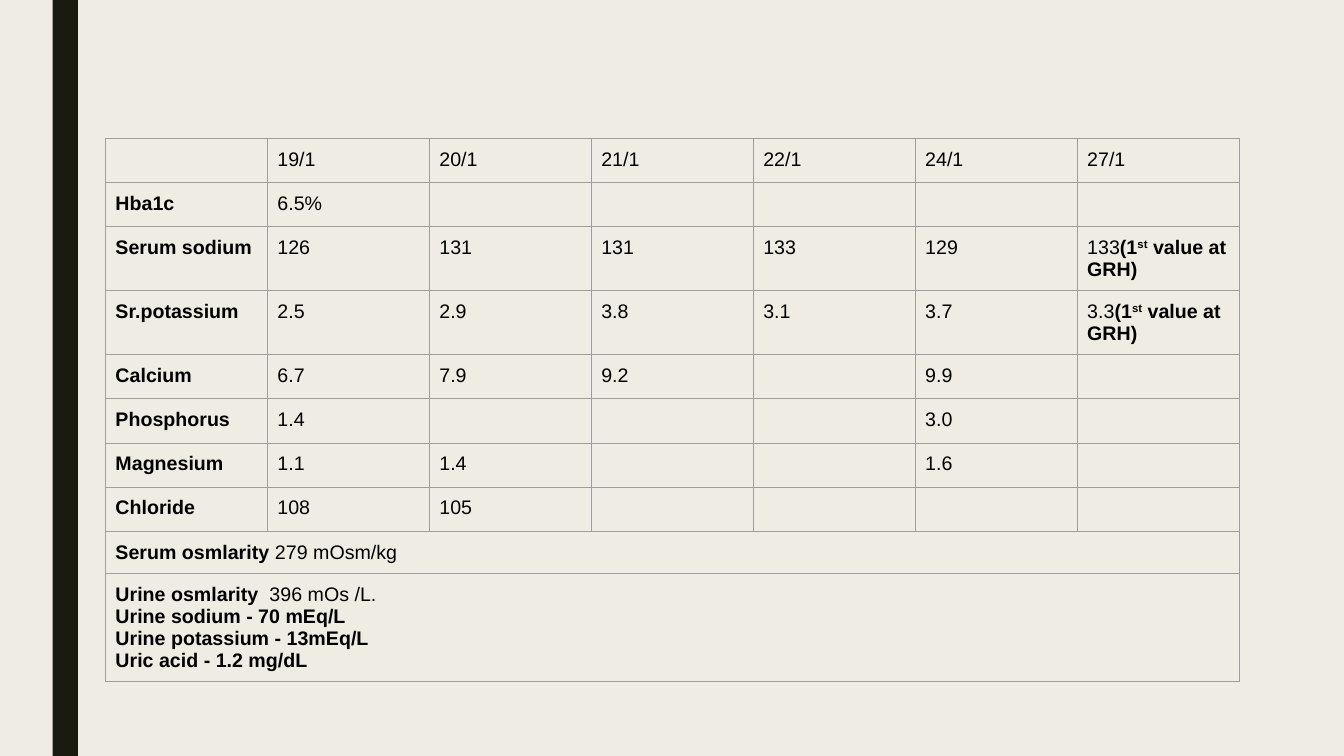
from dataclasses import dataclass

from lxml import etree
from pptx import Presentation
from pptx import util as u
from pptx.dml.color import RGBColor
from pptx.enum import shapes
from pptx.oxml import ns


@dataclass(frozen=True)
class Theme:
    background: str = "EFEDE3"
    bar: str = "191B0E"
    border: str = "9E9E9E"
    ink: str = "000000"
    font: str = "Arial"
    size: int = 14


THEME = Theme()
PAGE_WIDTH, PAGE_HEIGHT = u.Pt(960), u.Pt(540)
COLUMN_WIDTH = u.Pt(115.7)
CELL_MARGIN = u.Pt(7.2)
ROW_HEIGHT, NOTED_HEIGHT, URINE_HEIGHT = 30.1, 45.7, 77

# Spans are (text, bold, raised)
FIRST_VALUE = [("(1", True, False), ("st", True, True), (" value at GRH)", True, False)]

# Daily results: row label, then one value per date
RESULTS = [
    ["", "19/1", "20/1", "21/1", "22/1", "24/1", "27/1"],
    ["Hba1c", "6.5%", "", "", "", "", ""],
    ["Serum sodium", "126", "131", "131", "133", "129", "133"],
    ["Sr.potassium", "2.5", "2.9", "3.8", "3.1", "3.7", "3.3"],
    ["Calcium", "6.7", "7.9", "9.2", "", "9.9", ""],
    ["Phosphorus", "1.4", "", "", "", "3.0", ""],
    ["Magnesium", "1.1", "1.4", "", "", "1.6", ""],
    ["Chloride", "108", "105", "", "", "", ""],
]
NOTED_ROWS = ("Serum sodium", "Sr.potassium")

# Full-width rows: height, then paragraphs of spans
SUMMARIES = [
    (ROW_HEIGHT, [[("Serum osmlarity ", True, False), ("279 mOsm/kg", False, False)]]),
    (URINE_HEIGHT, [
        [("Urine osmlarity  ", True, False), ("396 mOs /L.", False, False)],
        [("Urine sodium - 70 mEq/L", True, False)],
        [("Urine potassium - 13mEq/L", True, False)],
        [("Uric acid - 1.2 mg/dL", True, False)],
    ]),
]


def add_bar(page):
    bar = page.shapes.add_shape(
        shapes.MSO_SHAPE.RECTANGLE, u.Pt(37.6), 0, u.Pt(18), PAGE_HEIGHT)
    bar.shadow.inherit = False
    bar.fill.solid()
    bar.fill.fore_color.rgb = RGBColor.from_string(THEME.bar)
    bar.line.fill.background()


def style_cell(cell):
    """Draw thin borders on every side and leave the cell unfilled."""
    properties = cell._tc.get_or_add_tcPr()
    for side in ("lnL", "lnR", "lnT", "lnB"):
        line = etree.SubElement(properties, ns.qn(f"a:{side}"), w=str(u.Pt(0.75)))
        fill = etree.SubElement(line, ns.qn("a:solidFill"))
        etree.SubElement(fill, ns.qn("a:srgbClr"), val=THEME.border)
    cell.fill.background()
    cell.margin_left = cell.margin_right = CELL_MARGIN
    cell.margin_top = cell.margin_bottom = CELL_MARGIN


def add_span(para, words, bold, raised):
    span = para.add_run()
    span.text = words
    font = span.font
    font.name, font.size, font.bold = THEME.font, u.Pt(THEME.size), bold
    font.color.rgb = RGBColor.from_string(THEME.ink)
    if raised:
        span._r.get_or_add_rPr().set("baseline", "30000")


def write_cell(cell, paragraphs):
    frame = cell.text_frame
    for index, spans in enumerate(paragraphs):
        para = frame.add_paragraph() if index else frame.paragraphs[0]
        for span in spans:
            add_span(para, *span)
        if not spans:
            # Keep empty cells from growing their row
            etree.SubElement(para._p, ns.qn("a:endParaRPr"), sz=str(THEME.size * 100))


def result_spans(row, column):
    value = row[column]
    spans = [(value, column == 0, False)] if value else []
    if row[0] in NOTED_ROWS and column == len(row) - 1:
        spans += FIRST_VALUE
    return spans


def add_results_table(page):
    column_count = len(RESULTS[0])
    heights = [NOTED_HEIGHT if row[0] in NOTED_ROWS else ROW_HEIGHT for row in RESULTS]
    heights += [height for height, _ in SUMMARIES]
    table = page.shapes.add_table(
        len(heights), column_count, u.Pt(75.3), u.Pt(98.8),
        COLUMN_WIDTH * column_count, u.Pt(sum(heights))).table
    table.first_row = table.horz_banding = False
    for column in table.columns:
        column.width = COLUMN_WIDTH
    for row, height in zip(table.rows, heights):
        row.height = u.Pt(height)
    for cell in table.iter_cells():
        style_cell(cell)

    # Daily values
    for row_index, row in enumerate(RESULTS):
        for column in range(column_count):
            write_cell(table.cell(row_index, column), [result_spans(row, column)])

    # Osmolarity and urine findings
    for row_index, (_, paragraphs) in enumerate(SUMMARIES, len(RESULTS)):
        first = table.cell(row_index, 0)
        first.merge(table.cell(row_index, column_count - 1))
        write_cell(first, paragraphs)


def main():
    deck = Presentation()
    deck.slide_width, deck.slide_height = PAGE_WIDTH, PAGE_HEIGHT
    page = deck.slides.add_slide(deck.slide_layouts[6])
    page.background.fill.solid()
    page.background.fill.fore_color.rgb = RGBColor.from_string(THEME.background)
    add_bar(page)
    add_results_table(page)
    deck.save("out.pptx")


if __name__ == "__main__":
    main()
